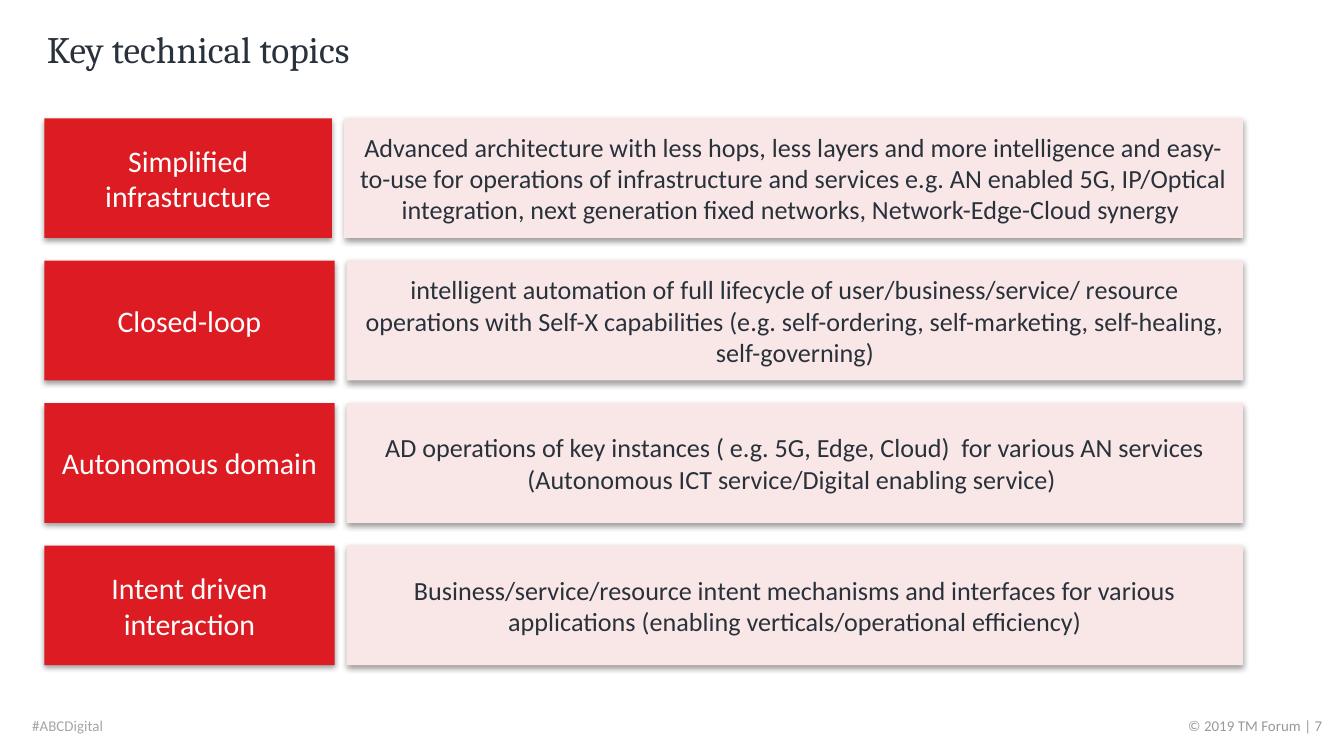
from lxml import etree
from pptx import Presentation
from pptx.dml.color import RGBColor
from pptx.enum.shapes import MSO_SHAPE
from pptx.enum.text import MSO_ANCHOR, PP_ALIGN
from pptx.oxml.ns import qn
from pptx.util import Inches, Pt

RECTANGLE = MSO_SHAPE.RECTANGLE
TOP, MIDDLE = MSO_ANCHOR.TOP, MSO_ANCHOR.MIDDLE
LEFT, CENTER, RIGHT = PP_ALIGN.LEFT, PP_ALIGN.CENTER, PP_ALIGN.RIGHT

# Content
TITLE = "Key technical topics"
HASHTAG = "#ABCDigital"
COPYRIGHT = "© 2019 TM Forum | 7"
TOPICS = [
    ("Simplified infrastructure",
     "Advanced architecture with less hops, less layers and more intelligence "
     "and easy-to-use for operations of infrastructure and services e.g. AN "
     "enabled 5G, IP/Optical integration, next generation fixed networks, "
     "Network-Edge-Cloud synergy "),
    ("Closed-loop",
     "intelligent automation of full lifecycle of user/business/service/ "
     "resource operations with Self-X capabilities (e.g. self-ordering, "
     "self-marketing, self-healing, self-governing)"),
    ("Autonomous domain",
     "AD operations of key instances ( e.g. 5G, Edge, Cloud)  for various AN "
     "services (Autonomous ICT service/Digital enabling service) "),
    ("Intent driven interaction",
     "Business/service/resource intent mechanisms and interfaces for various "
     "applications (enabling verticals/operational efficiency)"),
]

THEME = {
    "heading_font": "Cambria", "body_font": "Calibri",
    "title_size": 20, "topic_size": 16, "detail_size": 14, "footer_size": 8,
    "ink": "29313B", "white": "FFFFFF", "red": "DC1C22", "pink": "F9E7E7",
    "hashtag": "A6A6A6", "copyright": "999999", "shadow": "000000",
}

# Layout in inches, on a 16:9 slide
SLIDE_WIDTH = 10
SLIDE_HEIGHT = SLIDE_WIDTH * 9 / 16
ROW_TOP, ROW_STEP, ROW_HEIGHT = 0.88, 1.06, 0.89
TOPIC_LEFT, DETAIL_RIGHT, COLUMN_GAP = 0.33, 9.25, 0.09
FIRST_TOPIC_WIDTH, TOPIC_WIDTH = 2.14, 2.16
FOOTER_TOP, FOOTER_WIDTH, FOOTER_HEIGHT = 5.31, 2.17, 0.15


def write(shape, text, font, size, color, align, anchor=MIDDLE):
    frame = shape.text_frame
    frame.word_wrap = True
    frame.vertical_anchor = anchor
    frame.text = text
    paragraph = frame.paragraphs[0]
    paragraph.alignment = align
    run_font = paragraph.runs[0].font
    run_font.name = THEME[font]
    run_font.size = Pt(THEME[size])
    run_font.color.rgb = RGBColor.from_string(THEME[color])
    return frame


def add_soft_shadow(shape):
    shape.shadow.inherit = False
    effects = shape._element.spPr.find(qn("a:effectLst"))
    shadow = etree.SubElement(
        effects, qn("a:outerShdw"), blurRad=str(Pt(3.1)), dist=str(Pt(1.6)),
        dir="5400000", algn="t", rotWithShape="0")
    color = etree.SubElement(shadow, qn("a:srgbClr"), val=THEME["shadow"])
    etree.SubElement(color, qn("a:alpha"), val="38000")


def add_card(slide, left, top, width, fill, text, size, color):
    card = slide.shapes.add_shape(
        RECTANGLE, Inches(left), Inches(top), Inches(width), Inches(ROW_HEIGHT))
    card.fill.solid()
    card.fill.fore_color.rgb = RGBColor.from_string(THEME[fill])
    card.line.fill.background()
    add_soft_shadow(card)
    write(card, text, "body_font", size, color, CENTER)


def add_footer(slide, left, text, color, align):
    footer = slide.shapes.add_textbox(
        Inches(left), Inches(FOOTER_TOP), Inches(FOOTER_WIDTH), Inches(FOOTER_HEIGHT))
    frame = write(footer, text, "body_font", "footer_size", color, align, TOP)
    frame.margin_left = Inches(0.07)
    frame.margin_top = Inches(0.02)
    frame.margin_right = frame.margin_bottom = 0


def main():
    deck = Presentation()
    deck.slide_width, deck.slide_height = Inches(SLIDE_WIDTH), Inches(SLIDE_HEIGHT)
    slide = deck.slides.add_slide(deck.slide_layouts[6])

    # Footer
    add_footer(slide, 7.67, COPYRIGHT, "copyright", RIGHT)
    add_footer(slide, 0.17, HASHTAG, "hashtag", LEFT)

    # Title
    title = slide.shapes.add_textbox(
        Inches(0.25), Inches(0.14), Inches(9.45), Inches(0.44))
    write(title, TITLE, "heading_font", "title_size", "ink", LEFT)

    # Topic rows
    for row, (topic, detail) in enumerate(TOPICS):
        top = ROW_TOP + row * ROW_STEP
        topic_width = TOPIC_WIDTH if row else FIRST_TOPIC_WIDTH
        detail_left = TOPIC_LEFT + topic_width + COLUMN_GAP
        add_card(slide, detail_left, top, DETAIL_RIGHT - detail_left,
                 "pink", detail, "detail_size", "ink")
        add_card(slide, TOPIC_LEFT, top, topic_width,
                 "red", topic, "topic_size", "white")

    deck.save("out.pptx")


if __name__ == "__main__":
    main()
